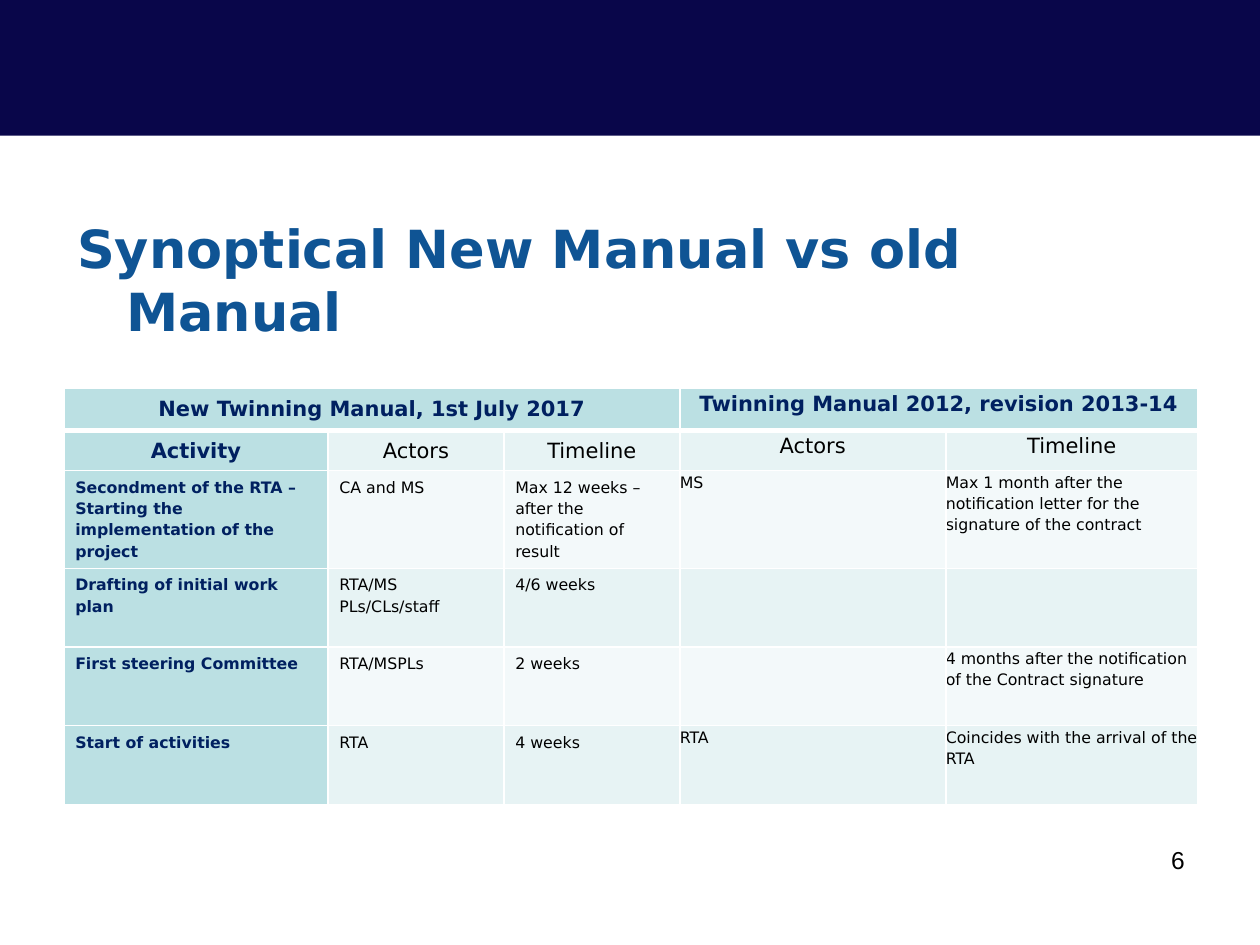
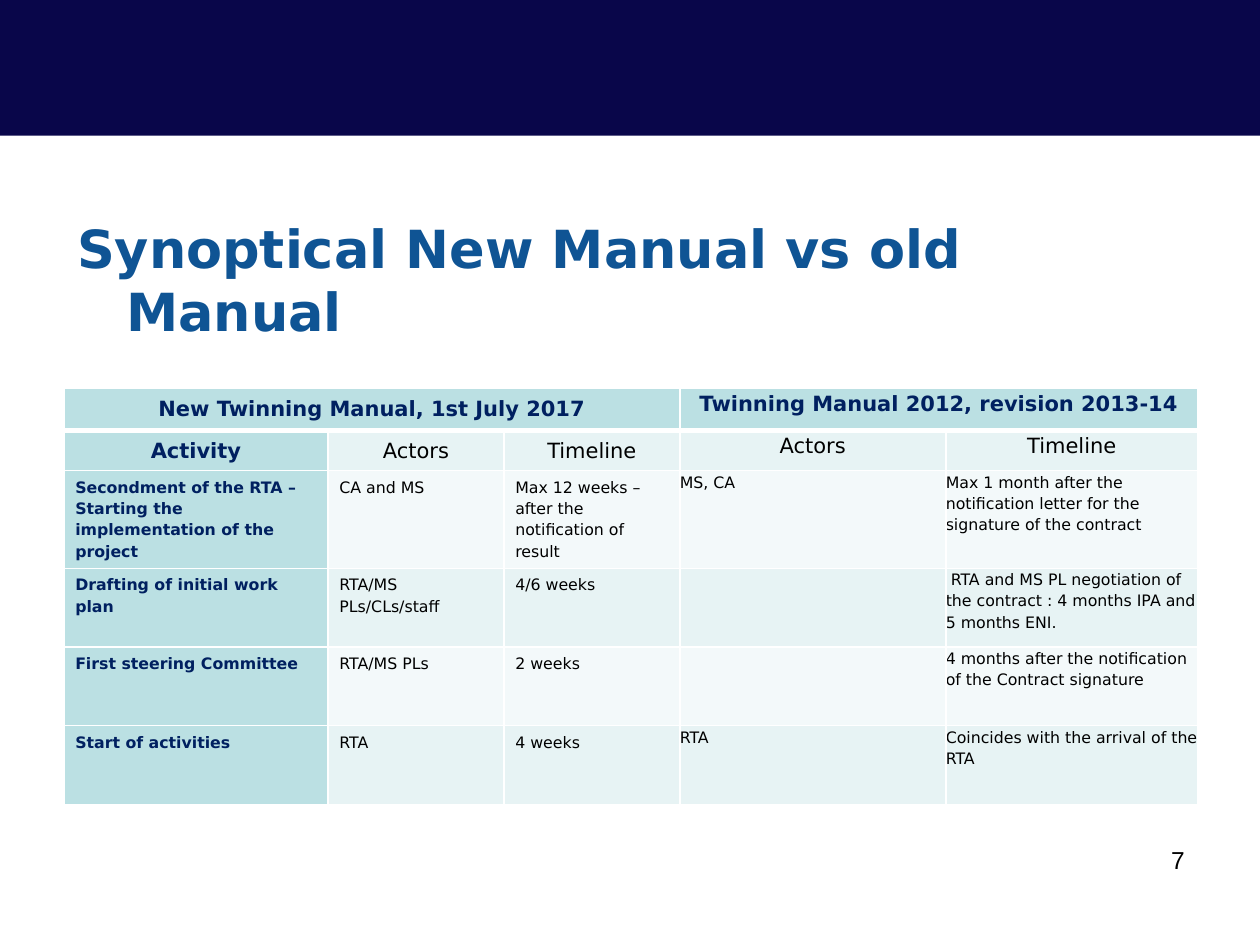
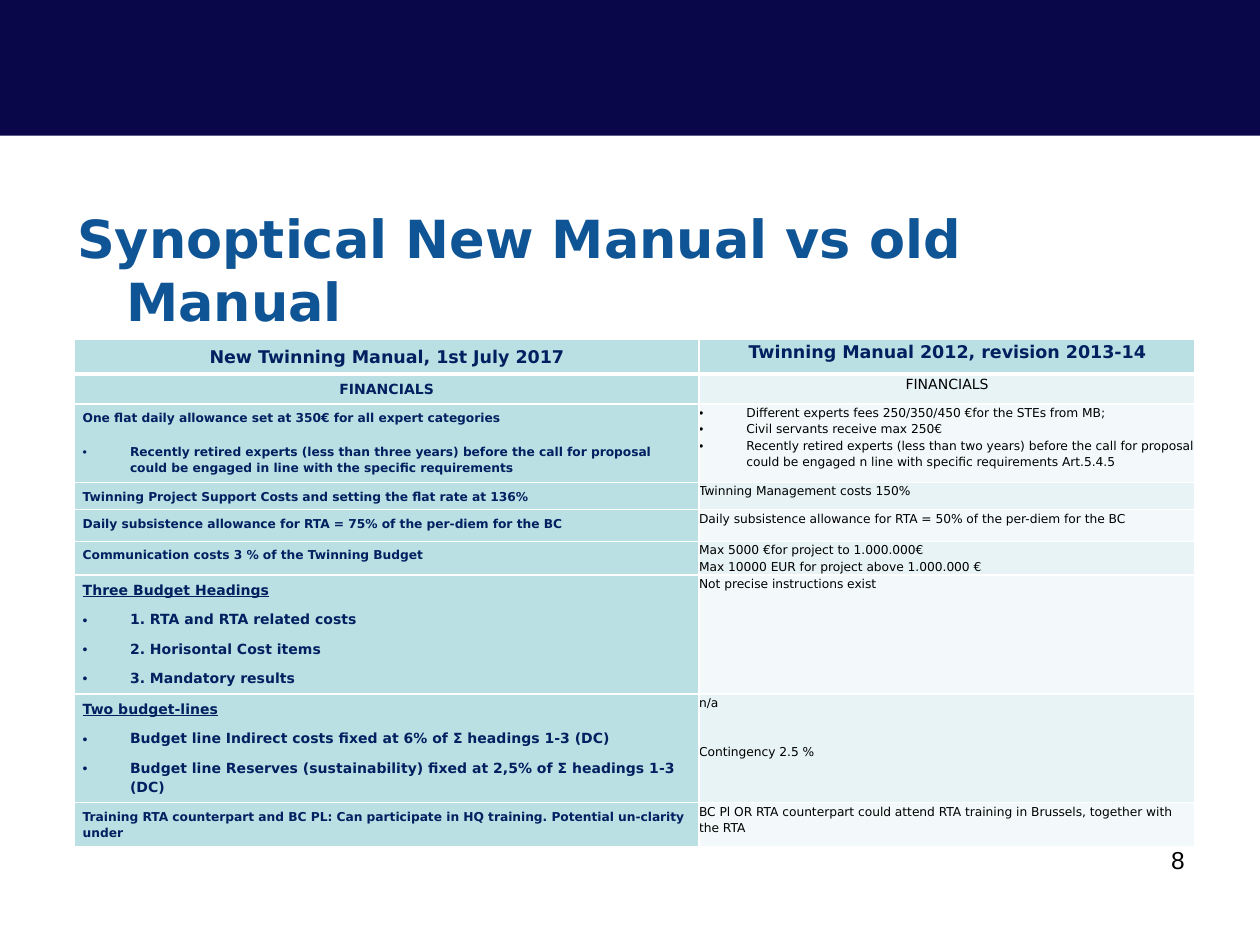
from dataclasses import dataclass

from lxml import etree
from pptx import Presentation
from pptx.dml import color
from pptx.enum import shapes, text
from pptx.oxml import ns
from pptx.util import Pt

NAVY = color.RGBColor(0x09, 0x06, 0x4A)
TITLE_BLUE = color.RGBColor(0x0F, 0x54, 0x94)
HEADING_BLUE = color.RGBColor(0x00, 0x20, 0x60)
BLACK = color.RGBColor(0x00, 0x00, 0x00)
WHITE = color.RGBColor(0xFF, 0xFF, 0xFF)
TEAL = color.RGBColor(0xBB, 0xE0, 0xE3)
BANDS = (color.RGBColor(0xF3, 0xF9, 0xFA), color.RGBColor(0xE7, 0xF3, 0xF4))


@dataclass
class Line:
    text: str
    bullet: bool = False
    size: float = None
    underline: bool = False
    before: float = 0
    after: float = 0


@dataclass
class TableStyle:
    left: float
    top: float
    widths: tuple
    heights: tuple
    heading_spans: tuple
    heading_sizes: tuple
    body_size: float
    side_margin: float

    def first_old_column(self):
        return self.heading_spans[0]


class Deck:
    font = "DejaVu Sans"
    title_text = "Synoptical New Manual vs old Manual"
    headings = ("New Twinning Manual, 1st July 2017", "Twinning Manual 2012, revision 2013-14")

    def __init__(self):
        self.presentation = Presentation()
        self.presentation.slide_width = Pt(720)
        self.presentation.slide_height = Pt(540)
        self.slide = None

    def start_slide(self, number, title_height=73.5):
        self.slide = self.presentation.slides.add_slide(self.presentation.slide_layouts[6])
        self.band()
        self.title(title_height)
        self.page_number(number)

    def band(self):
        shape = self.slide.shapes.add_shape(
            shapes.MSO_SHAPE.RECTANGLE, Pt(0), Pt(0), Pt(720), Pt(77.5))
        shape.shadow.inherit = False
        shape.fill.solid()
        shape.fill.fore_color.rgb = NAVY
        shape.line.fill.background()

    def text_box(self, left, top, width, height):
        frame = self.slide.shapes.add_textbox(Pt(left), Pt(top), Pt(width), Pt(height)).text_frame
        frame.word_wrap = True
        return frame

    def title(self, height):
        frame = self.text_box(37, 122.5, 648, height)
        frame.vertical_anchor = text.MSO_ANCHOR.MIDDLE
        paragraph = frame.paragraphs[0]
        self.hang(paragraph, 28)
        self.run(paragraph, self.title_text, 30, TITLE_BLUE, bold=True)

    def page_number(self, number):
        paragraph = self.text_box(516, 479.5, 168, 37.5).paragraphs[0]
        paragraph.alignment = text.PP_ALIGN.RIGHT
        self.run(paragraph, str(number), 14, BLACK, font="Arial")

    def run(self, paragraph, words, size, rgb, bold=False, underline=False, font=None):
        run = paragraph.add_run()
        run.text = words
        run.font.name = font or self.font
        run.font.size = Pt(size)
        run.font.color.rgb = rgb
        run.font.bold = bold
        if underline:
            run.font.underline = True

    def hang(self, paragraph, indent):
        properties = paragraph._p.get_or_add_pPr()
        properties.set("marL", str(Pt(indent)))
        properties.set("indent", str(-Pt(indent)))
        return properties

    def bullet(self, paragraph):
        properties = self.hang(paragraph, 27)
        etree.SubElement(properties, ns.qn("a:buFont")).set("typeface", "Arial")
        etree.SubElement(properties, ns.qn("a:buChar")).set("char", "•")

    def borders(self, cell, top, bottom):
        properties = cell._tc.get_or_add_tcPr()
        for side, width in (("L", 1), ("R", 1), ("T", top), ("B", bottom)):
            line = etree.SubElement(properties, ns.qn(f"a:ln{side}"), w=str(Pt(width)))
            fill = etree.SubElement(line, ns.qn("a:solidFill"))
            etree.SubElement(fill, ns.qn("a:srgbClr"), val=str(WHITE))

    def cell_text(self, cell, lines, size, rgb, bold, centred):
        frame = cell.text_frame
        for index, line in enumerate(lines):
            paragraph = frame.add_paragraph() if index else frame.paragraphs[0]
            paragraph.line_spacing = 1.15
            if line.before:
                paragraph.space_before = Pt(line.before)
            if line.after:
                paragraph.space_after = Pt(line.after)
            if centred:
                paragraph.alignment = text.PP_ALIGN.CENTER
            if line.bullet:
                self.bullet(paragraph)
            self.run(paragraph, line.text, line.size or size, rgb, bold, line.underline)

    def table(self, style, rows):
        heading_row = []
        for words, span in zip(self.headings, style.heading_spans):
            heading_row += [words] + [""] * (span - 1)
        table = self.slide.shapes.add_table(
            len(style.heights), len(style.widths), Pt(style.left), Pt(style.top),
            Pt(sum(style.widths)), Pt(sum(style.heights))).table
        table.first_row = table.horz_banding = False
        for column, width in zip(table.columns, style.widths):
            column.width = Pt(width)
        for row, height in zip(table.rows, style.heights):
            row.height = Pt(height)
        for row_index, contents in enumerate([heading_row, *rows]):
            for column_index, content in enumerate(contents):
                self.cell(table.cell(row_index, column_index), style,
                          row_index, column_index, content)
        start = 0
        for span in style.heading_spans:
            if span > 1:
                table.cell(0, start).merge(table.cell(0, start + span - 1))
            start += span

    def cell(self, cell, style, row_index, column_index, content):
        is_heading = row_index == 0 or column_index == 0
        is_old = column_index >= style.first_old_column()
        self.borders(cell, 3 if row_index == 1 else 1, 3 if row_index == 0 else 1)
        cell.fill.solid()
        cell.fill.fore_color.rgb = TEAL if is_heading else BANDS[row_index % 2]
        cell.margin_left = cell.margin_right = Pt(0 if is_old else style.side_margin)
        cell.margin_top = cell.margin_bottom = Pt(0 if is_old else 3)
        if not content:
            return
        lines = [Line(content)] if isinstance(content, str) else content
        is_label = row_index < len(style.heading_sizes)
        size = style.heading_sizes[row_index] if is_label else style.body_size
        self.cell_text(cell, lines, size, HEADING_BLUE if is_heading else BLACK,
                       is_heading, is_label)


SCHEDULE = TableStyle(36.5, 222, (151, 100.5, 100.5, 152, 144), (24, 23, 55.5, 45, 45, 45),
                      (3, 2), (12, 12), 9, 6.5)
FINANCIALS = TableStyle(42.5, 194, (357, 283.5),
                        (17.5, 14.5, 44.5, 14, 18, 18, 62, 46, 22.5),
                        (1, 1), (10, 8), 7, 4.8)


def schedule_rows(starter, plan_timeline, committee):
    return [
        ["Activity", "Actors", "Timeline", "Actors", "Timeline"],
        ["Secondment of the RTA – Starting the implementation of the project", "CA and MS",
         "Max 12 weeks – after the notification of result", starter,
         "Max 1 month after the notification letter for the signature of the contract"],
        ["Drafting of initial work plan", "RTA/MS PLs/CLs/staff", "4/6 weeks", "",
         plan_timeline],
        ["First steering Committee", committee, "2 weeks", "",
         "4 months after the notification of the Contract signature"],
        ["Start of activities", "RTA", "4 weeks", "RTA",
         "Coincides with the arrival of the RTA"],
    ]


def budget_list(heading, *items):
    return [Line(heading, size=8, underline=True, after=6),
            *(Line(item, bullet=True, size=8, after=6) for item in items)]


FINANCIAL_ROWS = [
    ["FINANCIALS", "FINANCIALS"],
    [[Line("One flat daily allowance set at 350€ for all expert categories", after=10),
      Line("Recently retired experts (less than three years) before the call for proposal "
           "could be engaged in line with the specific requirements", bullet=True)],
     [Line("Different experts fees 250/350/450 €for the STEs from MB;", bullet=True),
      Line("Civil servants receive max 250€", bullet=True),
      Line("Recently retired experts (less than two years) before the call for proposal "
           "could be engaged n line with specific requirements Art.5.4.5", bullet=True)]],
    ["Twinning Project Support Costs and setting the flat rate at 136%",
     "Twinning Management costs 150%"],
    ["Daily subsistence allowance for RTA = 75% of the per-diem for the BC",
     "Daily subsistence allowance for RTA = 50% of the per-diem for the BC"],
    ["Communication costs 3 % of the Twinning Budget",
     [Line("Max 5000 €for project to 1.000.000€"),
      Line("Max 10000 EUR for project above 1.000.000 €")]],
    [budget_list("Three Budget Headings", "1. RTA and RTA related costs",
                 "2. Horisontal Cost items", "3. Mandatory results"),
     "Not precise instructions exist"],
    [budget_list("Two budget-lines",
                 "Budget line Indirect costs fixed at 6% of Σ headings 1-3 (DC)",
                 "Budget line Reserves (sustainability) fixed at 2,5% of Σ headings 1-3 (DC)"),
     [Line("n/a"), Line("Contingency 2.5 %", before=18.75)]],
    ["Training RTA counterpart and BC PL: Can participate in HQ training. "
     "Potential un-clarity under",
     "BC Pl OR RTA counterpart could attend RTA training in Brussels, together with the RTA"],
]


def main():
    deck = Deck()
    deck.start_slide(6)
    deck.table(SCHEDULE, schedule_rows("MS", "", "RTA/MSPLs"))
    deck.start_slide(7)
    deck.table(SCHEDULE, schedule_rows(
        "MS, CA",
        " RTA and MS PL negotiation of the contract : 4 months IPA and 5 months ENI.",
        "RTA/MS PLs"))
    deck.start_slide(8, title_height=62.5)
    deck.table(FINANCIALS, FINANCIAL_ROWS)
    deck.presentation.save("out.pptx")


if __name__ == "__main__":
    main()
